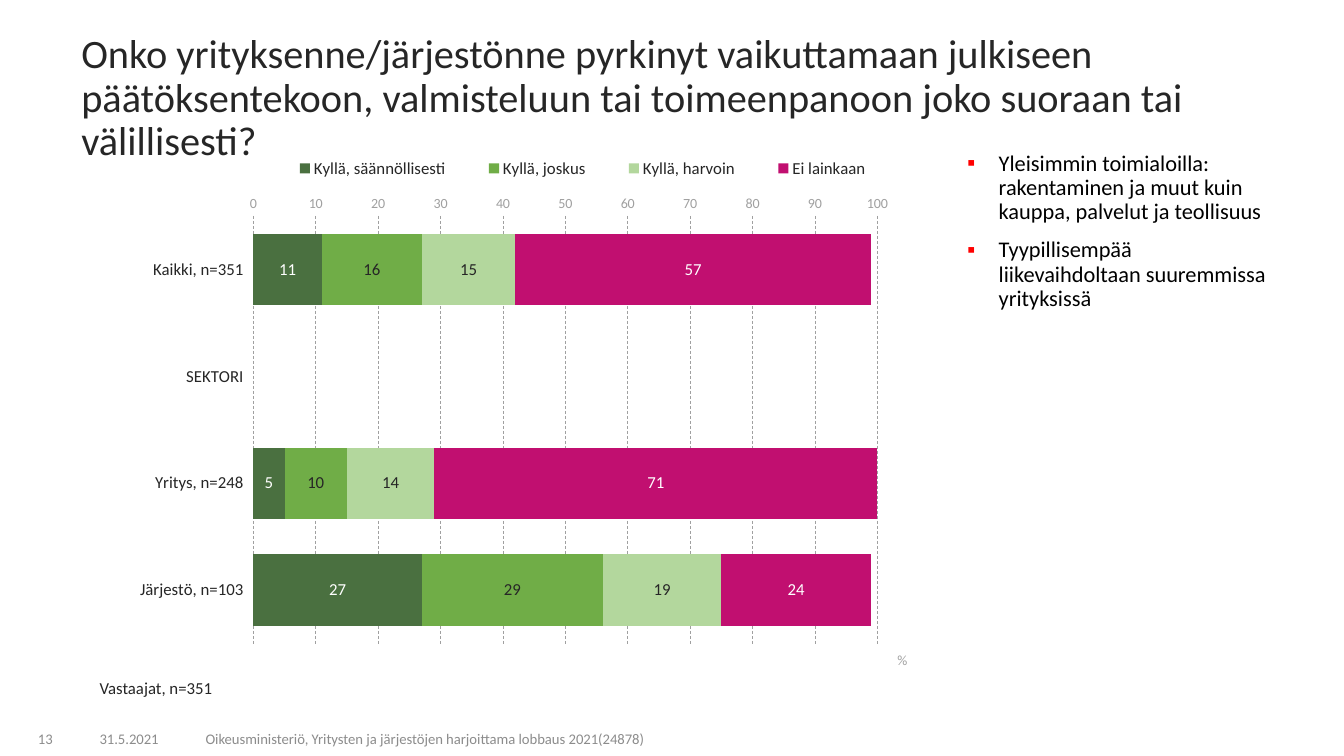
from lxml.etree import SubElement
from pptx import Presentation
from pptx.chart.data import CategoryChartData
from pptx.dml.color import RGBColor
from pptx.enum.chart import (XL_AXIS_CROSSES as Crosses, XL_CHART_TYPE as ChartType,
                             XL_LEGEND_POSITION as LegendPosition,
                             XL_TICK_LABEL_POSITION as LabelPosition, XL_TICK_MARK as TickMark)
from pptx.enum.dml import MSO_LINE as LineDash
from pptx.enum.text import MSO_ANCHOR as Anchor, PP_ALIGN as Align
from pptx.oxml.ns import qn
from pptx.util import Cm, Pt

BLACK = RGBColor(0x00, 0x00, 0x00)
WHITE = RGBColor(0xFF, 0xFF, 0xFF)
INK = RGBColor(0x26, 0x26, 0x26)
FOOTER_GRAY = RGBColor(0x8C, 0x8C, 0x8C)
AXIS_GRAY = RGBColor(0xA0, 0xA0, 0xA0)
DARK_GREEN = RGBColor(0x4A, 0x70, 0x40)
GREEN = RGBColor(0x70, 0xAD, 0x47)
LIGHT_GREEN = RGBColor(0xB3, 0xD7, 0x9D)
MAGENTA = RGBColor(0xC1, 0x0F, 0x70)

GROUPS = ["Kaikki, n=351", "SEKTORI", "Yritys, n=248", "Järjestö, n=103"]
ANSWERS = [
    ("Kyllä, säännöllisesti", (11, None, 5, 27), DARK_GREEN, WHITE),
    ("Kyllä, joskus", (16, None, 10, 29), GREEN, INK),
    ("Kyllä, harvoin", (15, None, 14, 19), LIGHT_GREEN, INK),
    ("Ei lainkaan", (57, None, 71, 24), MAGENTA, WHITE),
]
FOOTERS = [
    ("31.5.2021", 1.68, 3.15, Align.CENTER),
    ("Oikeusministeriö, Yritysten ja järjestöjen harjoittama lobbaus 2021(24878)",
     4.93, 15.04, Align.LEFT),
    ("13", 0.08, 1.5, Align.RIGHT),
]


class SlideBuilder:
    font_name = "Calibri"

    def __init__(self, deck):
        self.page = deck.slides.add_slide(deck.slide_layouts[6])

    def style(self, font, size, color):
        font.name = self.font_name
        font.size = Pt(size)
        font.bold = False
        font.color.rgb = color

    def text(self, lines, place, size, color, anchor=Anchor.TOP, align=Align.LEFT,
             spacing=0.9, bullet=False):
        box = self.page.shapes.add_textbox(*map(Cm, place))
        frame = box.text_frame
        frame.word_wrap = True
        frame.vertical_anchor = anchor
        for index, line in enumerate(lines):
            para = frame.add_paragraph() if index else frame.paragraphs[0]
            para.alignment = align
            para.line_spacing = spacing
            if index:
                para.space_before = Pt(10)
            if bullet:
                self.bullet(para)
            span = para.add_run()
            span.text = line
            self.style(span.font, size, color)

    def bullet(self, para):
        props = para._p.get_or_add_pPr()
        props.set("marL", str(Cm(0.79)))
        props.set("indent", str(-Cm(0.79)))
        tint = SubElement(props, qn("a:buClr"))
        SubElement(tint, qn("a:srgbClr"), val="FF0000")
        SubElement(props, qn("a:buFont"), typeface=self.font_name)
        SubElement(props, qn("a:buChar"), char="▪")

    def layout(self, parent, index, **fractions):
        for old in parent.findall(qn("c:layout")):
            parent.remove(old)
        layout = SubElement(parent, qn("c:layout"))
        parent.insert(index, layout)
        manual = SubElement(layout, qn("c:manualLayout"))
        if parent.tag == qn("c:plotArea"):
            SubElement(manual, qn("c:layoutTarget"), val="inner")
        for side in "xy":
            SubElement(manual, qn(f"c:{side}Mode"), val="edge")
        for side, fraction in fractions.items():
            SubElement(manual, qn(f"c:{side}"), val=str(fraction))

    def stacked_bars(self, groups, answers, place):
        data = CategoryChartData(number_format="#,##0")
        data.categories = groups
        for name, values, _, _ in answers:
            data.add_series(name, values)
        frame = self.page.shapes.add_chart(ChartType.BAR_STACKED, *map(Cm, place), data)
        chart = frame.chart
        chart.has_title = False
        self.style(chart.font, 12, BLACK)
        plot = chart.plots[0]
        plot.gap_width = 50
        plot.overlap = 100
        plot.vary_by_categories = False
        for series, (_, _, fill, label_color) in zip(plot.series, answers):
            series.format.fill.solid()
            series.format.fill.fore_color.rgb = fill
            labels = series.data_labels
            labels.show_value = True
            labels.number_format = "#,##0"
            labels.number_format_is_linked = False
            self.style(labels.font, 12, label_color)
        self.axes(chart)
        self.legend(chart)
        area = chart.element.find(".//" + qn("c:plotArea"))
        self.layout(area, 0, x=0.21, y=0.13, w=0.72, h=0.81)

    def axes(self, chart):
        groups, percent = chart.category_axis, chart.value_axis
        for axis, size, color in ((groups, 12, INK), (percent, 10, AXIS_GRAY)):
            axis.major_tick_mark = axis.minor_tick_mark = TickMark.NONE
            axis.format.line.fill.background()
            self.style(axis.tick_labels.font, size, color)
        groups.reverse_order = True
        groups.crosses = Crosses.MAXIMUM
        groups.tick_label_position = LabelPosition.LOW
        percent.minimum_scale = 0
        percent.maximum_scale = 100
        percent.major_unit = 10
        percent.tick_labels.number_format = "General"
        percent.tick_labels.number_format_is_linked = False
        grid = percent.major_gridlines.format.line
        grid.color.rgb = AXIS_GRAY
        grid.width = Pt(0.5)
        grid.dash_style = LineDash.DASH
        title = percent.axis_title
        span = title.text_frame.paragraphs[0].add_run()
        span.text = "%"
        self.style(span.font, 10, AXIS_GRAY)
        self.layout(title._element, 1, x=0.95, y=0.95)

    def legend(self, chart):
        chart.has_legend = True
        legend = chart.legend
        legend.position = LegendPosition.TOP
        legend.include_in_layout = False
        self.style(legend.font, 12, INK)
        self.layout(legend._element, 1, x=0.22, y=0.01, w=0.74, h=0.06)


def main():
    deck = Presentation()
    deck.slide_width, deck.slide_height = Cm(33.87), Cm(19.05)
    slide = SlideBuilder(deck)
    for words, left, width, align in FOOTERS:
        slide.text([words], (left, 18.19, width, 0.76), 10.5, FOOTER_GRAY,
                   Anchor.BOTTOM, align, spacing=1.0)
    slide.text(["Yleisimmin toimialoilla: rakentaminen ja muut kuin kauppa, palvelut ja teollisuus",
                "Tyypillisempää liikevaihdoltaan suuremmissa yrityksissä"],
               (24.13, 3.71, 8.33, 14.15), 16, BLACK, bullet=True)
    slide.text(["Onko yrityksenne/järjestönne pyrkinyt vaikuttamaan julkiseen päätöksentekoon, "
                "valmisteluun tai toimeenpanoon joko suoraan tai välillisesti?"],
               (1.8, 1.63, 30.66, 1.73), 28.8, INK, Anchor.MIDDLE)
    slide.stacked_bars(GROUPS, ANSWERS, (1.8, 3.71, 21.84, 13.31))
    slide.text(["Vastaajat, n=351"], (2.26, 17.02, 23.32, 0.71), 12, INK)
    deck.save("out.pptx")


if __name__ == "__main__":
    main()
